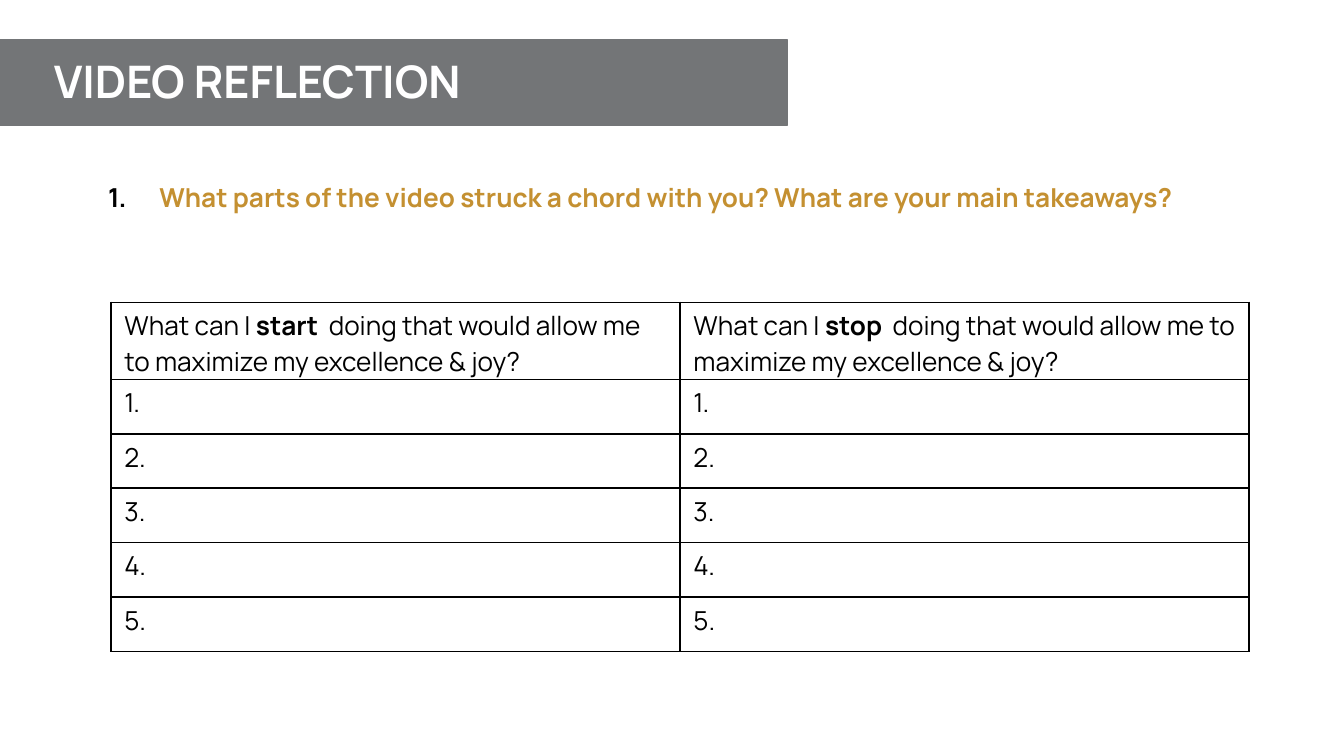
from lxml import etree
from pptx import Presentation
from pptx.dml.color import RGBColor
from pptx.enum.shapes import MSO_SHAPE
from pptx.enum.text import MSO_ANCHOR, PP_ALIGN
from pptx.oxml.ns import qn
from pptx.util import Inches, Pt

RECTANGLE = MSO_SHAPE.RECTANGLE
TOP, MIDDLE = MSO_ANCHOR.TOP, MSO_ANCHOR.MIDDLE
LEFT = PP_ALIGN.LEFT

WIDTH = 10
HEIGHT = WIDTH * 9 / 16
COLORS = {"banner": "737577", "white": "FFFFFF", "gold": "C49031", "black": "000000"}
BORDERS = ("a:lnL", "a:lnR", "a:lnT", "a:lnB")
HEADER_HEIGHT, ROW_HEIGHT = 0.57, 0.405


class SlideBuilder:
    font_name = "Manrope"
    body_size = 14
    title_size = 24

    def __init__(self, presentation):
        self.slide = presentation.slides.add_slide(presentation.slide_layouts[1])

    def place(self, shape, left, top, width, height):
        shape.left, shape.top = Inches(left * WIDTH), Inches(top * HEIGHT)
        shape.width, shape.height = Inches(width * WIDTH), Inches(height * HEIGHT)

    def style(self, paragraph, size, color, bold=None):
        paragraph.alignment = LEFT
        paragraph.space_before = Pt(0)
        paragraph.font.name = self.font_name
        paragraph.font.size = Pt(size)
        paragraph.font.bold = bold
        paragraph.font.color.rgb = RGBColor.from_string(COLORS[color])

    def banner(self, left, top, width, height):
        shape = self.slide.shapes.add_shape(RECTANGLE, 0, 0, 0, 0)
        self.place(shape, left, top, width, height)
        shape.shadow.inherit = False
        color = RGBColor.from_string(COLORS["banner"])
        shape.fill.solid()
        shape.fill.fore_color.rgb = color
        shape.line.color.rgb = color
        shape.line.width = Pt(1)
        self.slide.shapes.title.element.addprevious(shape.element)

    def title(self, text, *box):
        shape = self.slide.shapes.title
        self.place(shape, *box)
        shape.text_frame.text = text
        shape.text_frame.vertical_anchor = MIDDLE
        shape.text_frame.margin_top = Inches(0.07)
        shape.text_frame.margin_bottom = Inches(0.1)
        self.style(shape.text_frame.paragraphs[0], self.title_size, "white", True)

    def numbered_list(self, items, *box):
        shape = self.slide.placeholders[1]
        self.place(shape, *box)
        frame = shape.text_frame
        frame.text = "\n".join(items)
        frame.vertical_anchor = TOP
        for paragraph in frame.paragraphs:
            self.style(paragraph, self.body_size, "gold", True)
            properties = paragraph._p.get_or_add_pPr()
            properties.set("marL", str(Inches(0.38)))
            properties.set("indent", str(-Inches(0.38)))
            bullet_color = etree.SubElement(properties, qn("a:buClr"))
            etree.SubElement(bullet_color, qn("a:srgbClr"), val=COLORS["black"])
            etree.SubElement(properties, qn("a:buAutoNum"), type="arabicPeriod")
            properties.append(properties.find(qn("a:defRPr")))

    def cell(self, cell, runs):
        cell.fill.background()
        cell.vertical_anchor = TOP
        cell.margin_top, cell.margin_bottom = Inches(0.04), 0
        paragraph = cell.text_frame.paragraphs[0]
        self.style(paragraph, self.body_size, "black")
        for text, bold in runs:
            run = paragraph.add_run()
            run.text = text
            run.font.bold = bold
        properties = cell._tc.get_or_add_tcPr()
        for index, tag in enumerate(BORDERS):
            line = etree.Element(qn(tag), w=str(Pt(1)))
            fill = etree.SubElement(line, qn("a:solidFill"))
            etree.SubElement(fill, qn("a:srgbClr"), val=COLORS["black"])
            properties.insert(index, line)

    def table(self, rows, *box):
        frame = self.slide.shapes.add_table(len(rows), len(rows[0]), 0, 0, 0, 0)
        self.place(frame, *box)
        table = frame.table
        table.first_row = table.horz_banding = False
        for column in table.columns:
            column.width = Inches(box[2] * WIDTH / len(rows[0]))
        for index, values in enumerate(rows):
            table.rows[index].height = Inches(ROW_HEIGHT if index else HEADER_HEIGHT)
            for position, runs in enumerate(values):
                self.cell(table.cell(index, position), runs)


def main():
    presentation = Presentation()
    presentation.slide_width, presentation.slide_height = Inches(WIDTH), Inches(HEIGHT)
    builder = SlideBuilder(presentation)

    banner_top, banner_height = 0.3 / HEIGHT, 0.63 / HEIGHT
    builder.banner(0, banner_top, 0.586, banner_height)
    builder.title("VIDEO REFLECTION", 0.03, banner_top, 0.537, banner_height)
    builder.numbered_list(
        ["What parts of the video struck a chord with you? What are your main takeaways?"],
        0.0705, 1.3 / HEIGHT, 0.858, 1.51 / HEIGHT,
    )

    headings = [
        [
            ("What can I ", False),
            (f"{action} ", True),
            (" doing that would allow me to maximize my excellence & joy?", False),
        ]
        for action in ("start", "stop")
    ]
    answers = [[[(f"{number}.", False)]] * len(headings) for number in range(1, 6)]
    table_height = HEADER_HEIGHT + ROW_HEIGHT * len(answers)
    builder.table([headings] + answers, 0.0825, 2.25 / HEIGHT, 0.847, table_height / HEIGHT)

    presentation.save("out.pptx")


if __name__ == "__main__":
    main()
